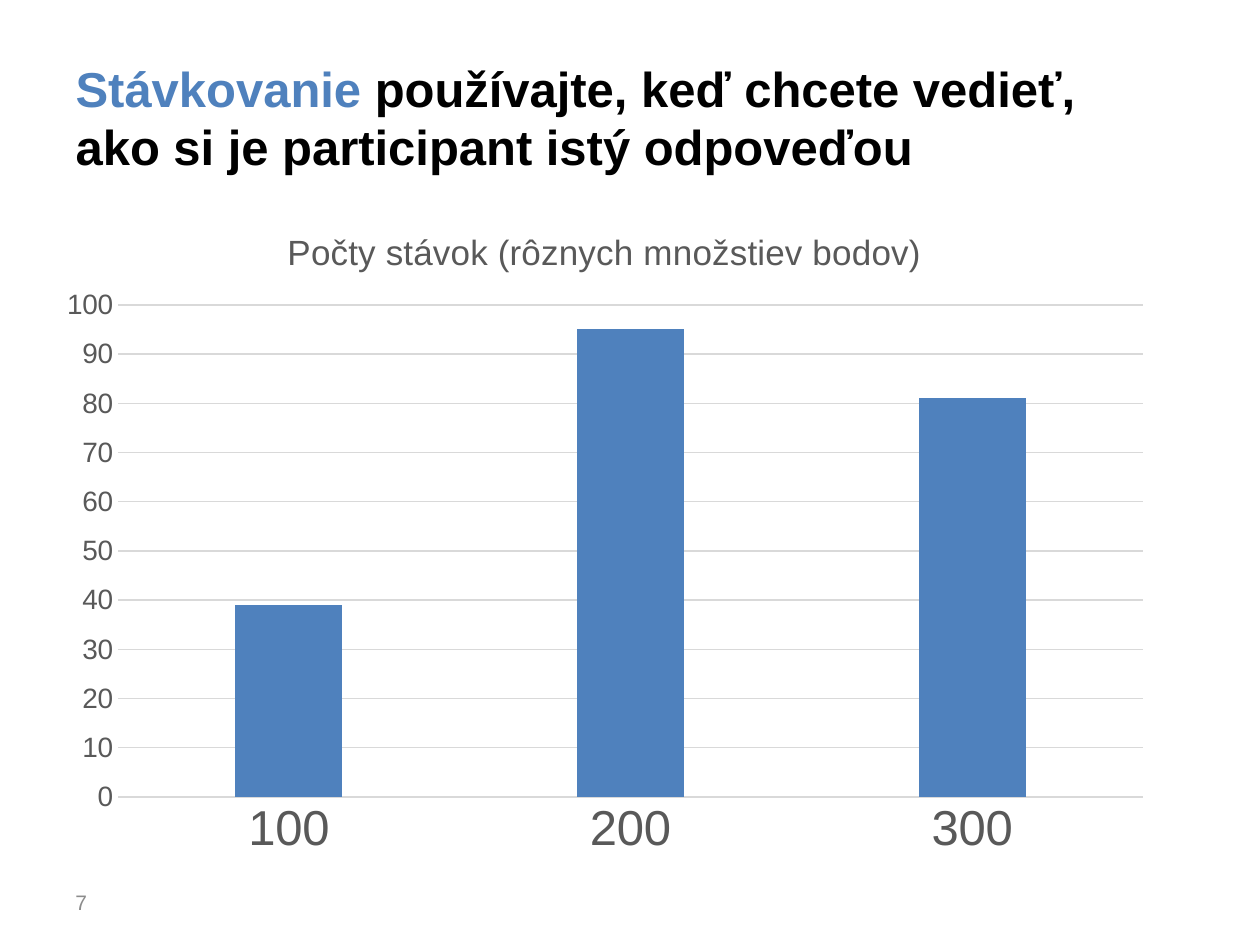
from dataclasses import dataclass

from lxml import etree
from pptx import Presentation
from pptx import util as u
from pptx.chart.data import CategoryChartData
from pptx.dml.color import RGBColor
from pptx.enum import chart as ch, text as tx
from pptx.oxml.ns import qn


@dataclass(frozen=True)
class Theme:
    font: str = "Arial"
    blue: str = "4F81BD"
    black: str = "000000"
    gray: str = "595959"
    pale: str = "8C8C8C"
    rule: str = "D9D9D9"
    head: int = 28
    sub: int = 20
    tick: int = 16
    note: int = 12


def px(n):
    """Turn pixels, 126 to the inch, into EMU."""
    return u.Emu(n * 914400 // 126)


class Deck:
    """Holds the style and the current slide."""

    def __init__(self, theme):
        self.theme = theme
        self.prs = Presentation()
        self.prs.slide_width, self.prs.slide_height = px(1260), px(945)
        self.slide = self.prs.slides.add_slide(self.prs.slide_layouts[5])

    def style(self, font, size, color, bold=False):
        font.name, font.size, font.bold = self.theme.font, u.Pt(size), bold
        font.color.rgb = RGBColor.from_string(color)

    def rule(self, line):
        line.color.rgb = RGBColor.from_string(self.theme.rule)
        line.width = u.Pt(0.75)

    def title(self, box, lead, rest):
        shape = self.slide.shapes.title
        shape.left, shape.top, shape.width, shape.height = map(px, box)
        frame = shape.text_frame
        frame.auto_size = tx.MSO_AUTO_SIZE.NONE
        frame.vertical_anchor = tx.MSO_ANCHOR.MIDDLE
        para = frame.paragraphs[0]
        para.text = rest
        para.alignment = tx.PP_ALIGN.LEFT
        first = para.runs[0]
        word = para.add_run()
        word.text = lead
        first._r.addprevious(word._r)
        for run in para.runs:
            color = self.theme.blue if run.text == lead else self.theme.black
            self.style(run.font, self.theme.head, color, True)

    def number(self, box, label):
        frame = self.slide.shapes.add_textbox(*map(px, box)).text_frame
        frame.word_wrap = True
        frame.vertical_anchor = tx.MSO_ANCHOR.MIDDLE
        para = frame.paragraphs[0]
        para.text = label
        self.style(para.font, self.theme.note, self.theme.pale)

    def bars(self, box, plot, title, cats, vals):
        t = self.theme
        data = CategoryChartData()
        data.categories = cats
        data.add_series("Series 1", vals)
        chart = self.slide.shapes.add_chart(
            ch.XL_CHART_TYPE.COLUMN_CLUSTERED, *map(px, box), data).chart
        self.style(chart.font, t.sub, t.black)
        chart.has_legend = False
        chart.has_title = True
        para = chart.chart_title.text_frame.paragraphs[0]
        para.text = title
        self.style(para.font, t.sub, t.gray)

        group = chart.plots[0]
        group.gap_width, group.overlap = 219, -27
        group.vary_by_categories = False
        fill = group.series[0].format.fill
        fill.solid()
        fill.fore_color.rgb = RGBColor.from_string(t.blue)

        cat, val = chart.category_axis, chart.value_axis
        for axis, size in ((cat, t.head), (val, t.tick)):
            axis.major_tick_mark = axis.minor_tick_mark = ch.XL_TICK_MARK.NONE
            self.style(axis.tick_labels.font, size, t.gray)
        self.rule(cat.format.line)
        val.format.line.fill.background()
        val.has_major_gridlines = True
        self.rule(val.major_gridlines.format.line)
        val.minimum_scale, val.maximum_scale, val.major_unit = 0, 100, 10
        self.place(chart, box, plot)

    def place(self, chart, box, plot):
        """Pin the inner plot area, given in slide px, within the chart box."""
        area = chart._chartSpace.chart.plotArea
        for old in area.findall(qn("c:layout")):
            area.remove(old)
        layout = etree.Element(qn("c:layout"))
        area.insert(0, layout)
        manual = etree.SubElement(layout, qn("c:manualLayout"))
        left, top, wide, high = box
        x, y, w, h = plot
        parts = {"layoutTarget": "inner", "xMode": "edge", "yMode": "edge",
                 "x": (x - left) / wide, "y": (y - top) / high,
                 "w": w / wide, "h": h / high}
        for name, value in parts.items():
            etree.SubElement(manual, qn(f"c:{name}")).set("val", str(value))


def main():
    deck = Deck(Theme())
    deck.title((63, 38, 1134, 158), "Stávkovanie ",
               "používajte, keď chcete vedieť, \vako si je participant istý odpoveďou")
    deck.number((63, 877, 294, 50), "7")
    deck.bars((44, 204, 1121, 665), (118, 305, 1025, 492),
              "Počty stávok (rôznych množstiev bodov)",
              ("100", "200", "300"), (39, 95, 81))
    deck.prs.save("out.pptx")


if __name__ == "__main__":
    main()
